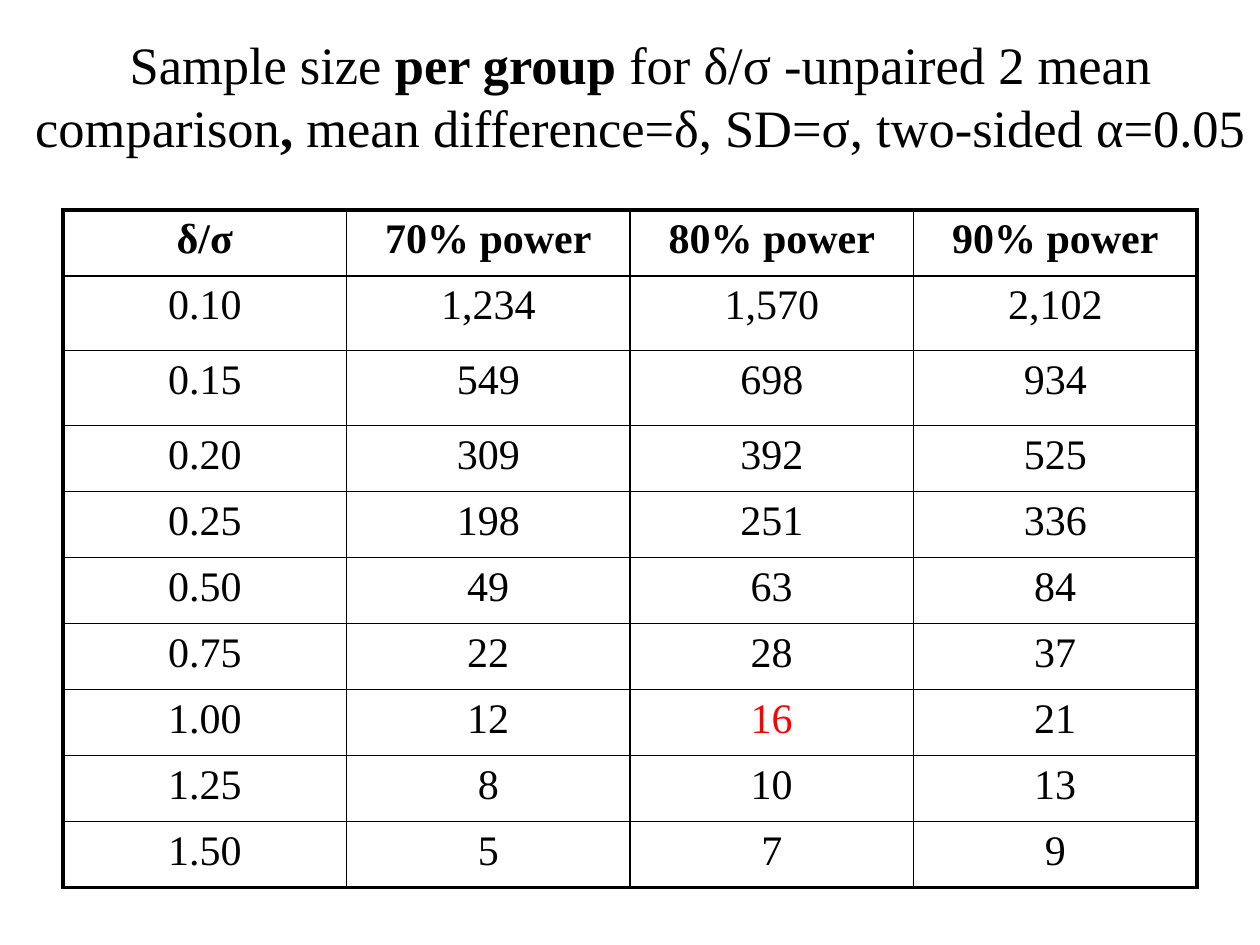
import pptx
import pptx.dml.color
import pptx.enum.text
import pptx.oxml
import pptx.oxml.ns
import pptx.util

Cm, Pt = pptx.util.Cm, pptx.util.Pt
PP_ALIGN = pptx.enum.text.PP_ALIGN
BLACK = pptx.dml.color.RGBColor(0, 0, 0)
RED = pptx.dml.color.RGBColor(255, 0, 0)
THIN, THICK = Pt(1), Pt(2.25)

HEADER = ["δ/σ", "70% power", "80% power", "90% power"]
SAMPLE_SIZES = [
    ["0.10", "1,234", "1,570", "2,102"],
    ["0.15", "549", "698", "934"],
    ["0.20", "309", "392", "525"],
    ["0.25", "198", "251", "336"],
    ["0.50", "49", "63", "84"],
    ["0.75", "22", "28", "37"],
    ["1.00", "12", "16", "21"],
    ["1.25", "8", "10", "13"],
    ["1.50", "5", "7", "9"],
]


def add_run(p, text, size, bold=False, color=BLACK):
    r = p.add_run()
    r.text = text
    r.font.name = "Times New Roman"
    r.font.size = Pt(size)
    r.font.bold = bold
    r.font.color.rgb = color


def add_border(cell, side, width):
    cell._tc.get_or_add_tcPr().append(pptx.oxml.parse_xml(
        f'<a:ln{side} {pptx.oxml.ns.nsdecls("a")} w="{width}">'
        f'<a:solidFill><a:srgbClr val="{BLACK}"/></a:solidFill></a:ln{side}>'))


prs = pptx.Presentation()
prs.slide_width, prs.slide_height = Cm(25.4), Cm(19.05)
s = prs.slides.add_slide(prs.slide_layouts[6])

# Title
sp = s.shapes.add_textbox(Cm(0.43), Cm(0.43), Cm(24.97), Cm(2.97))
tf = sp.text_frame
tf.word_wrap = True
tf.vertical_anchor = pptx.enum.text.MSO_ANCHOR.MIDDLE
p = tf.paragraphs[0]
p.alignment = PP_ALIGN.CENTER
for text, bold in [
    ("Sample size ", False),
    ("per group ", True),
    ("for δ/σ -unpaired 2 mean comparison", False),
    (", ", True),
    ("mean difference=δ, SD=σ, two-sided α=0.05", False),
]:
    add_run(p, text, 30, bold)

# Sample size table
rows = [HEADER] + SAMPLE_SIZES
last_row, last_col = len(rows) - 1, len(HEADER) - 1
table = s.shapes.add_table(len(rows), len(HEADER), Cm(1.27), Cm(4.23),
                           Cm(22.86), Cm(13.66)).table
for col in table.columns:
    col.width = Cm(5.715)
for i, row in enumerate(table.rows):
    row.height = Cm(1.51) if i in (1, 2) else Cm(1.33)

# Cells: thick outer frame, thin inner grid
for i, values in enumerate(rows):
    for j, value in enumerate(values):
        cell = table.cell(i, j)
        for side, outer in [("L", j == 0), ("R", j == last_col),
                            ("T", i == 0), ("B", i == last_row)]:
            add_border(cell, side, THICK if outer else THIN)
        cell.fill.background()
        p = cell.text_frame.paragraphs[0]
        p.alignment = PP_ALIGN.CENTER
        add_run(p, value, 24, i == 0, RED if value == "16" else BLACK)

prs.save("out.pptx")
